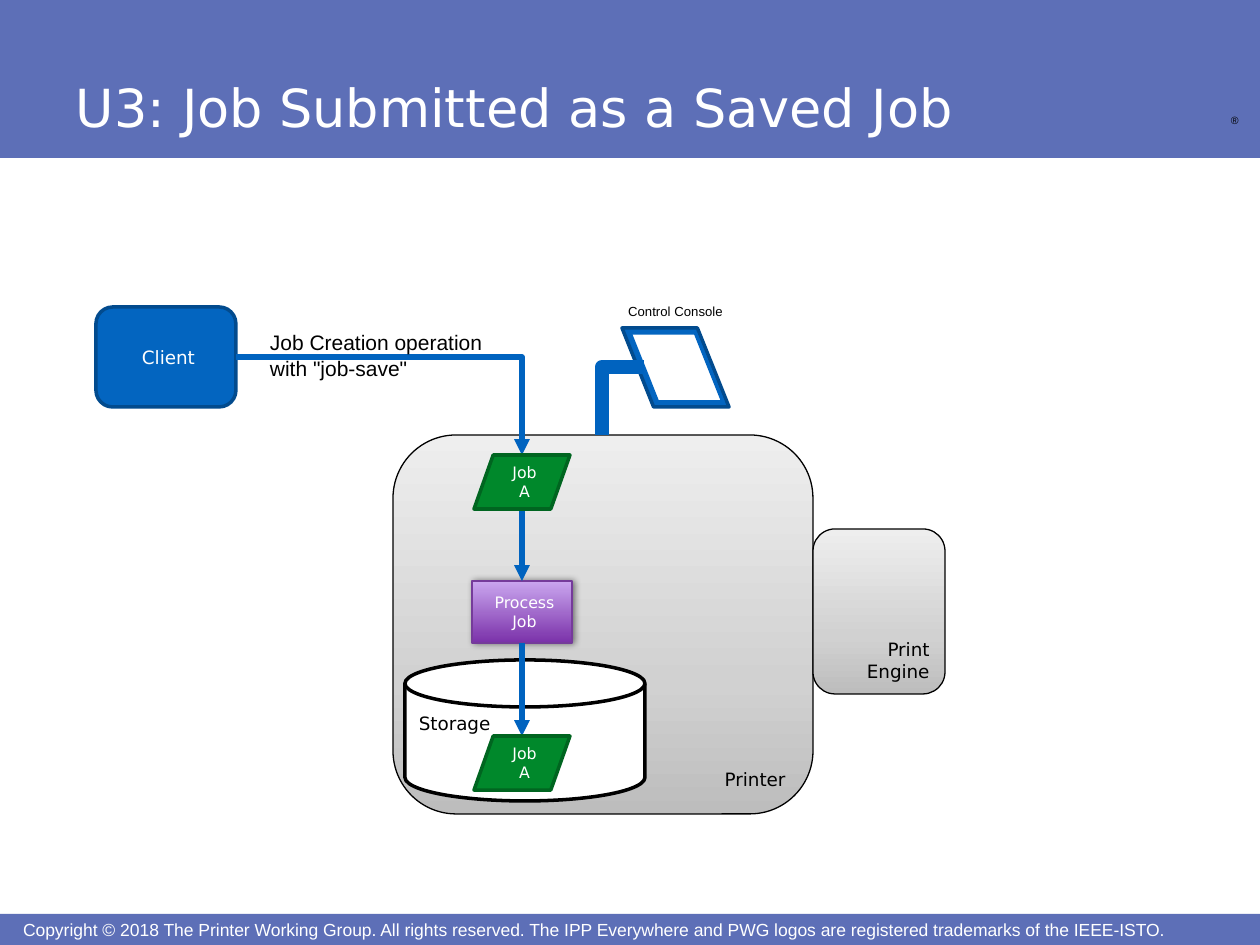
"""Build the slide that shows a job submitted to a printer as a saved job."""
from lxml import etree
from pptx import Presentation, util as u
from pptx.dml.color import RGBColor
from pptx.enum import shapes, text
from pptx.oxml.ns import qn

SCALE = 914400 / 126
KIND, ALIGN, ANCHOR = shapes.MSO_SHAPE, text.PP_ALIGN, text.MSO_ANCHOR
METAL = [(0, "BDBDBD"), (35, "D1D1D1"), (100, "EEEEEE")]
VIOLET = [(0, "7A31A9"), (100, "CAA6EF")]

THEME = {
    "sans": "DejaVu Sans", "plain": "Arial", "white": "FFFFFF", "black": "000000",
    "flow": "0063BF", "title": 30, "note": 12, "footer": 10, "label": 10.5,
    "step": 9, "console": 7.5, "mark": 6,
}
STYLES = {
    "band": {"fill": "5D6FB7"},
    "metal": {"fill": METAL, "line": ("000000", 0.75)},
    "storage": {"fill": "FFFFFF", "line": ("000000", 2)},
    "process": {"fill": VIOLET, "line": ("753B9A", 0.75), "shadow": True},
    "client": {"fill": "0365C0", "line": ("024B8E", 2)},
    "job": {"fill": "00882B", "line": ("006520", 2)},
    "screen": {"fill": "FFFFFF", "line": ("0365C0", 2)},
}
CORNER = {"size": "label", "color": "black", "align": ALIGN.RIGHT, "anchor": ANCHOR.BOTTOM}
INNER = {"size": "label", "color": "black", "anchor": ANCHOR.TOP}
CENTRED = {"align": ALIGN.CENTER, "anchor": ANCHOR.MIDDLE}
STEP = CENTRED | {"size": "step"}

TITLE = "U3: Job Submitted as a Saved Job"
COPYRIGHT = ("Copyright © 2018 The Printer Working Group. All rights reserved. The IPP Everywhere "
             "and PWG logos are registered trademarks of the IEEE-ISTO.")
NOTE = ["Job Creation operation", 'with "job-save"']
JOB = ["Job", "A"]

AXIS = 522
JOB_W, JOB_H, JOB_TOP, SAVED_TOP = 96, 54, 455, 736
STEP_W, STEP_H, STEP_TOP = 100, 62, 581
CLIENT = (96, 307, 140, 100)
PRINTER = (393, 435, 420, 379)
CLIENT_EXIT = (CLIENT[0] + CLIENT[2], CLIENT[1] + CLIENT[3] // 2)

BANDS = [(0, 914, 1260, 31), (0, 0, 1260, 158)]


def centred_box(top, width, height):
    return AXIS - width // 2, top, width, height


BACK = [
    (KIND.ROUNDED_RECTANGLE, PRINTER, "metal", ["Printer"], CORNER),
    (KIND.FLOWCHART_MAGNETIC_DISK, (405, 660, 240, 141), "storage", ["Storage"], INNER),
    (KIND.FLOWCHART_PROCESS, centred_box(STEP_TOP, STEP_W, STEP_H), "process", ["Process Job"], STEP),
    (KIND.ROUNDED_RECTANGLE, CLIENT, "client", ["Client"], CENTRED | {"size": "label"}),
]
FLOWS = [
    ((AXIS, JOB_TOP + JOB_H), (AXIS, STEP_TOP)),
    ((AXIS, STEP_TOP + STEP_H), (AXIS, SAVED_TOP)),
    (CLIENT_EXIT, (AXIS, JOB_TOP)),
]
FRONT = [(KIND.FLOWCHART_DATA, centred_box(top, JOB_W, JOB_H), "job", JOB, STEP)
         for top in (JOB_TOP, SAVED_TOP)]
FRONT.append((KIND.ROUNDED_RECTANGLE, (PRINTER[0] + PRINTER[2], 529, 132, 165), "metal",
              ["Print", "Engine"], CORNER))
CONSOLE = [((622, 328, 107, 79), "client"), ((630, 333, 93, 69), "screen")]
CONSOLE_ARM = ((644, 367), (602, PRINTER[1]))


def px(*values):
    return [u.Emu(round(value * SCALE)) for value in values]


def write(shape, lines, *, size, font="sans", color="white", align=ALIGN.LEFT,
          anchor=ANCHOR.TOP, insets=(9, 5), wrap=True, indent=5):
    frame = shape.text_frame
    frame.word_wrap, frame.vertical_anchor = wrap, anchor
    frame.margin_left, frame.margin_top = px(*insets)
    frame.margin_right, frame.margin_bottom = px(*insets)
    for number, line in enumerate(lines):
        para = frame.add_paragraph() if number else frame.paragraphs[0]
        properties = para._p.get_or_add_pPr()
        properties.set("marL", str(px(indent)[0]))
        properties.set("indent", "0")
        para.alignment = align
        span = para.add_run()
        span.text = line
        span.font.name, span.font.size = THEME[font], u.Pt(THEME[size])
        span.font.color.rgb = RGBColor.from_string(THEME[color])


def paint(shape, fill, line=None, shadow=False):
    shape.shadow.inherit = False
    if isinstance(fill, str):
        shape.fill.solid()
        shape.fill.fore_color.rgb = RGBColor.from_string(fill)
    else:
        shape.fill.gradient()
        shape.fill.gradient_angle = 90
        stops = shape._element.spPr.find(".//" + qn("a:gsLst"))
        for stop in list(stops):
            stops.remove(stop)
        for place, color in fill:
            stop = etree.SubElement(stops, qn("a:gs"), pos=str(place * 1000))
            etree.SubElement(stop, qn("a:srgbClr"), val=color)
    if line:
        shape.line.color.rgb = RGBColor.from_string(line[0])
        shape.line.width = u.Pt(line[1])
    else:
        shape.line.fill.background()
    if shadow:
        effects = shape._element.spPr.find(qn("a:effectLst"))
        outer = etree.SubElement(effects, qn("a:outerShdw"), blurRad=str(u.Pt(4)),
                                 dist=str(u.Pt(1)), dir="0", rotWithShape="0")
        color = etree.SubElement(outer, qn("a:srgbClr"), val=THEME["black"])
        etree.SubElement(color, qn("a:alpha"), val="50000")


def add_shape(page, kind, box, style, lines=(), layout=None):
    shape = page.shapes.add_shape(kind, *px(*box))
    paint(shape, **STYLES[style])
    if lines:
        write(shape, lines, **layout)
    return shape


def add_note(page, box, lines, **layout):
    write(page.shapes.add_textbox(*px(*box)), lines, font="plain", **layout)


def add_flow(page, start, end, width=3, arrow=True):
    straight = start[0] == end[0]
    kind = shapes.MSO_CONNECTOR.STRAIGHT if straight else shapes.MSO_CONNECTOR.ELBOW
    flow = page.shapes.add_connector(kind, *px(*start, *end))
    properties = flow._element.spPr
    if not straight:
        properties.find(qn("a:prstGeom")).set("prst", "bentConnector2")
    flow.line.color.rgb = RGBColor.from_string(THEME["flow"])
    flow.line.width = u.Pt(width)
    if arrow:
        etree.SubElement(properties.find(qn("a:ln")), qn("a:tailEnd"), type="triangle")
    etree.SubElement(properties, qn("a:effectLst"))


def main():
    deck = Presentation()
    deck.slide_width, deck.slide_height = px(1260, 945)
    page = deck.slides.add_slide(deck.slide_layouts[5])
    for box in BANDS:
        add_shape(page, KIND.RECTANGLE, box, "band")
    add_note(page, (1215, 108, 34, 24), ["®"], size="mark", color="black",
             insets=(8, 8), wrap=False, indent=8)
    add_note(page, (18, 919, 1178, 21), [COPYRIGHT], size="footer",
             anchor=ANCHOR.MIDDLE, insets=(0, 0))
    title = page.shapes.title
    title.left, title.top, title.width, title.height = px(63, 6, 1043, 140)
    write(title, [TITLE], size="title", anchor=ANCHOR.BOTTOM, insets=(8, 8))
    page.shapes._spTree.append(title._element)

    for item in BACK:
        add_shape(page, *item)
    for start, end in FLOWS:
        add_flow(page, start, end)
    add_note(page, (252, 324, 249, 63), NOTE, size="note", color="black", insets=(13, 6))
    for item in FRONT:
        add_shape(page, *item)
    for box, style in CONSOLE:
        panel = add_shape(page, KIND.PARALLELOGRAM, box, style)
        panel.adjustments[0] = 0.4
        panel._element.spPr.find(qn("a:xfrm")).set("flipV", "1")
    add_flow(page, *CONSOLE_ARM, width=8, arrow=False)
    add_note(page, (610, 297, 131, 29), ["Control Console"], size="console", color="black",
             insets=(13, 6), wrap=False)
    deck.save("out.pptx")


if __name__ == "__main__":
    main()
